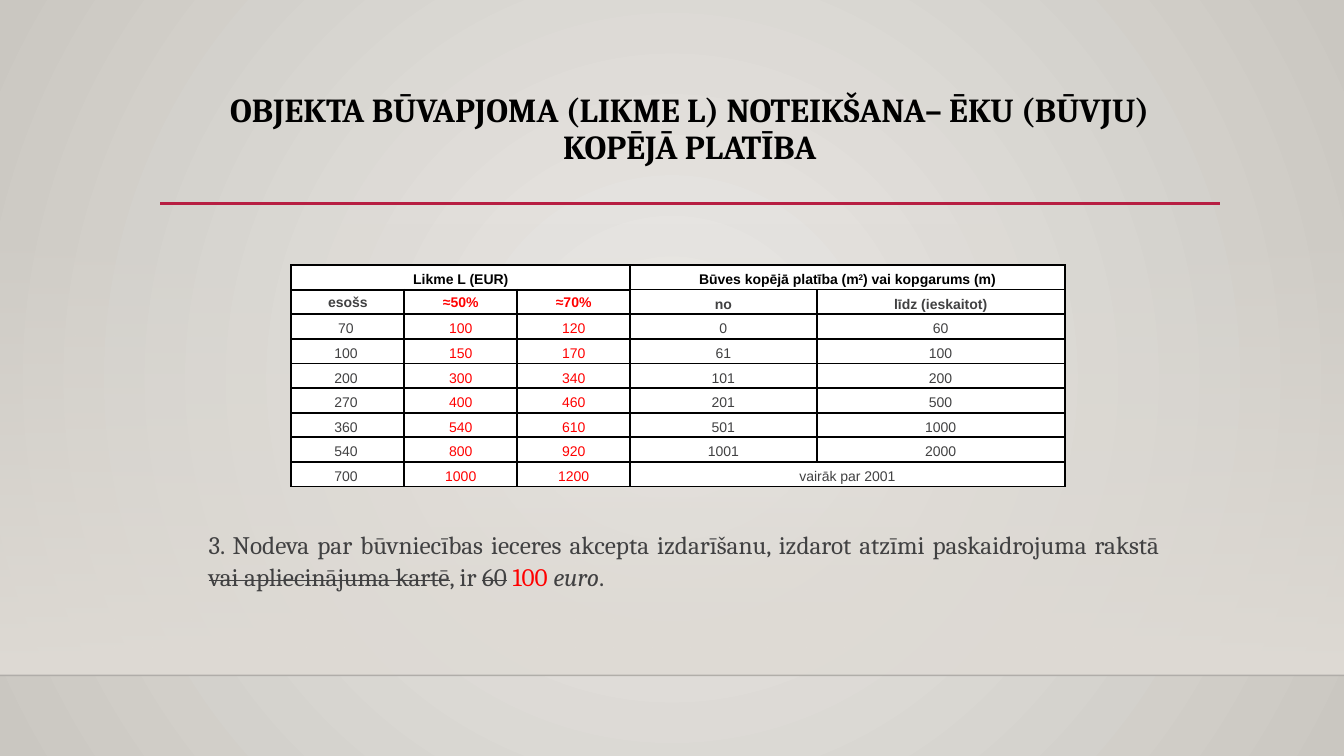
import pptx
import pptx.util
import pptx.dml.color
import pptx.enum.shapes
import pptx.enum.text
import pptx.oxml
import pptx.oxml.ns

Inches, Pt = pptx.util.Inches, pptx.util.Pt
ALIGN = pptx.enum.text.PP_ALIGN
ANCHOR = pptx.enum.text.MSO_ANCHOR
COLORS = {"black": "000000", "text": "414142", "new": "FF0000", "white": "FFFFFF",
          "accent": "B71E42", "floor_line": "000001", "floor": "DFDBD5",
          "bg_center": "ECEAE7", "bg_edge": "CAC7C1"}


def rgb(name):
    return pptx.dml.color.RGBColor.from_string(COLORS[name])


def element(xml):
    head, rest = xml.split(">", 1)
    names = pptx.oxml.ns.nsdecls("a", "p")
    return pptx.oxml.parse_xml(f"{head} {names}>{rest}")


def gradient(stops, direction):
    marks = "".join(f'<a:gs pos="{pos * 1000}"><a:srgbClr val="{COLORS[color]}">'
                    f'<a:alpha val="{alpha * 1000}"/></a:srgbClr></a:gs>'
                    for pos, color, alpha in stops)
    return f'<a:gradFill rotWithShape="1"><a:gsLst>{marks}</a:gsLst>{direction}</a:gradFill>'


class FeeSlide:
    heading_font, table_font = "Cambria", "Arial"

    def __init__(self, deck):
        self.slide = deck.slides.add_slide(deck.slide_layouts[5])
        self.shapes = self.slide.shapes

    def background(self):
        center = ('<a:path path="circle"><a:fillToRect l="50000" t="50000" '
                  'r="50000" b="50000"/></a:path>')
        fill = gradient([(0, "bg_center", 100), (100, "bg_edge", 100)], center)
        self.slide._element.cSld.insert(
            0, element(f"<p:bg><p:bgPr>{fill}<a:effectLst/></p:bgPr></p:bg>"))

    def fade(self, left, top, width, height):
        band = self.shapes.add_shape(pptx.enum.shapes.MSO_SHAPE.RECTANGLE, Inches(left),
                                     Inches(top), Inches(width), Inches(height))
        band.shadow.inherit = False
        band.line.fill.background()
        band.fill.background()
        properties = band._element.spPr
        empty_fill = properties.find(pptx.oxml.ns.qn("a:noFill"))
        properties.replace(empty_fill, element(gradient(
            [(0, "floor", 0), (100, "floor", 100)], '<a:lin ang="5400000" scaled="0"/>')))

    def rule(self, left, right, y, color, width, opacity=100):
        line = self.shapes.add_connector(pptx.enum.shapes.MSO_CONNECTOR.STRAIGHT, Inches(left),
                                         Inches(y), Inches(right), Inches(y))
        line.line.color.rgb = rgb(color)
        line.line.width = Pt(width)
        for shade in line._element.spPr.iter(pptx.oxml.ns.qn("a:srgbClr")):
            shade.append(element(f'<a:alpha val="{opacity * 1000}"></a:alpha>'))
        line._element.spPr.append(element("<a:effectLst></a:effectLst>"))

    def style(self, paragraph, font, size, color, align, spacing, bold=False):
        paragraph.alignment = align
        paragraph.line_spacing = spacing
        paragraph.font.name, paragraph.font.size = font, Pt(size)
        paragraph.font.bold = bold
        if color:
            paragraph.font.color.rgb = rgb(color)

    def title(self, text, left, top, width, height):
        heading = self.shapes.title
        heading.left, heading.top = Inches(left), Inches(top)
        heading.width, heading.height = Inches(width), Inches(height)
        heading.text_frame.text = text
        heading.text_frame.vertical_anchor = ANCHOR.TOP
        self.style(heading.text_frame.paragraphs[0], self.heading_font, 24, "black",
                   ALIGN.CENTER, 0.9, True)

    def note(self, pieces, left, top, width, height):
        frame = self.shapes.add_textbox(Inches(left), Inches(top), Inches(width),
                                        Inches(height)).text_frame
        frame.word_wrap = True
        frame.auto_size = pptx.enum.text.MSO_AUTO_SIZE.SHAPE_TO_FIT_TEXT
        paragraph = frame.paragraphs[0]
        self.style(paragraph, self.heading_font, 18, None, ALIGN.JUSTIFY, 1.07)
        paragraph.space_after = Pt(6)
        for text, look in pieces:
            run = paragraph.add_run()
            run.text = text
            run.font.color.rgb = rgb("new" if look == "new" else "text")
            if look == "italic":
                run.font.italic = True
            if look == "struck":
                run._r.get_or_add_rPr().set("strike", "sngStrike")

    def borders(self, cell, widths):
        properties = cell._tc.get_or_add_tcPr()
        for index, (side, width) in enumerate(zip("LRTB", widths)):
            properties.insert(index, element(
                f'<a:ln{side} w="{Pt(width)}"><a:solidFill><a:srgbClr '
                f'val="{COLORS["black"]}"/></a:solidFill></a:ln{side}>'))

    def table(self, rows, merges, left, top, column_widths, row_height):
        grid = self.shapes.add_table(
            len(rows), len(column_widths), Inches(left), Inches(top),
            Inches(sum(column_widths)), Inches(row_height * len(rows))).table
        grid.first_row = grid.horz_banding = False
        for column, width in zip(grid.columns, column_widths):
            column.width = Inches(width)
        for row in grid.rows:
            row.height = Inches(row_height)
        for r, values in enumerate(rows):
            for c, value in enumerate(values):
                self.cell(grid.cell(r, c), value, r, c)
        for r, first, last in merges:
            grid.cell(r, first).merge(grid.cell(r, last))

    def cell(self, cell, value, r, c):
        cell.fill.solid()
        cell.fill.fore_color.rgb = rgb("white")
        area = c >= 3
        self.borders(cell, (1.5, 1.5, 1 if area and r == 1 else 1.5,
                            1 if area and r == 0 else 1.5))
        cell.margin_left = cell.margin_right = Inches(0.02)
        cell.margin_top = cell.margin_bottom = Inches(0.02)
        if r < 2 and not area:
            cell.vertical_anchor = ANCHOR.MIDDLE
        paragraph = cell.text_frame.paragraphs[0]
        color = "black" if r == 0 else "new" if c in (1, 2) else "text"
        spacing = 1.07 if r == 1 and not area else Pt(14.7)
        self.style(paragraph, self.table_font, 10, color, ALIGN.CENTER, spacing, r < 2)
        paragraph.space_after = Pt(6)
        # A caret pair encloses a superscript
        for index, text in enumerate(value.split("^")):
            if text:
                run = paragraph.add_run()
                run.text = text
                if index % 2:
                    run._r.get_or_add_rPr().set("baseline", "30000")


def main():
    deck = pptx.Presentation()
    deck.slide_width, deck.slide_height = Inches(13.33), Inches(7.5)
    page = FeeSlide(deck)

    # Backdrop
    page.background()
    page.fade(0, 2.21, 13.33, 4.49)
    page.rule(0, 13.33, 6.7, "floor_line", 1, 20)

    # Heading
    page.rule(1.59, 12.1, 2.02, "accent", 2.5)
    page.title("OBJEKTA BŪVAPJOMA (LIKME L) NOTEIKŠANA– ĒKU (BŪVJU) KOPĒJĀ PLATĪBA",
               1.59, 0.88, 10.5, 1.15)

    # Rates by building area
    rates = [
        ("Likme L (EUR)", "", "", "Būves kopējā platība (m^2^) vai kopgarums (m)", ""),
        ("esošs", "≈50%", "≈70%", "no", "līdz (ieskaitot)"),
        ("70 ", "100", "120", "0", "60"),
        ("100 ", "150", "170", "61", "100"),
        ("200 ", "300", "340", "101", "200"),
        ("270 ", "400", "460", "201", "500"),
        ("360 ", "540", "610", "501", "1000"),
        ("540 ", "800", "920", "1001", "2000"),
        ("700 ", "1000", "1200", "vairāk par 2001", ""),
    ]
    page.table(rates, [(0, 0, 2), (0, 3, 4), (8, 3, 4)], 2.89, 2.63,
               [1.12, 1.12, 1.12, 1.85, 2.46], 0.24)

    # Fee for the approval
    page.note([
        ("3. Nodeva par būvniecības ieceres akcepta izdarīšanu, izdarot atzīmi "
         "paskaidrojuma rakstā ", "plain"),
        ("vai apliecinājuma kartē", "struck"), (", ir ", "plain"), ("60", "struck"),
        (" ", "plain"), ("100\u00a0", "new"), ("euro", "italic"), (".", "plain"),
    ], 1.97, 5.18, 9.63, 0.74)

    deck.save("out.pptx")


if __name__ == "__main__":
    main()
